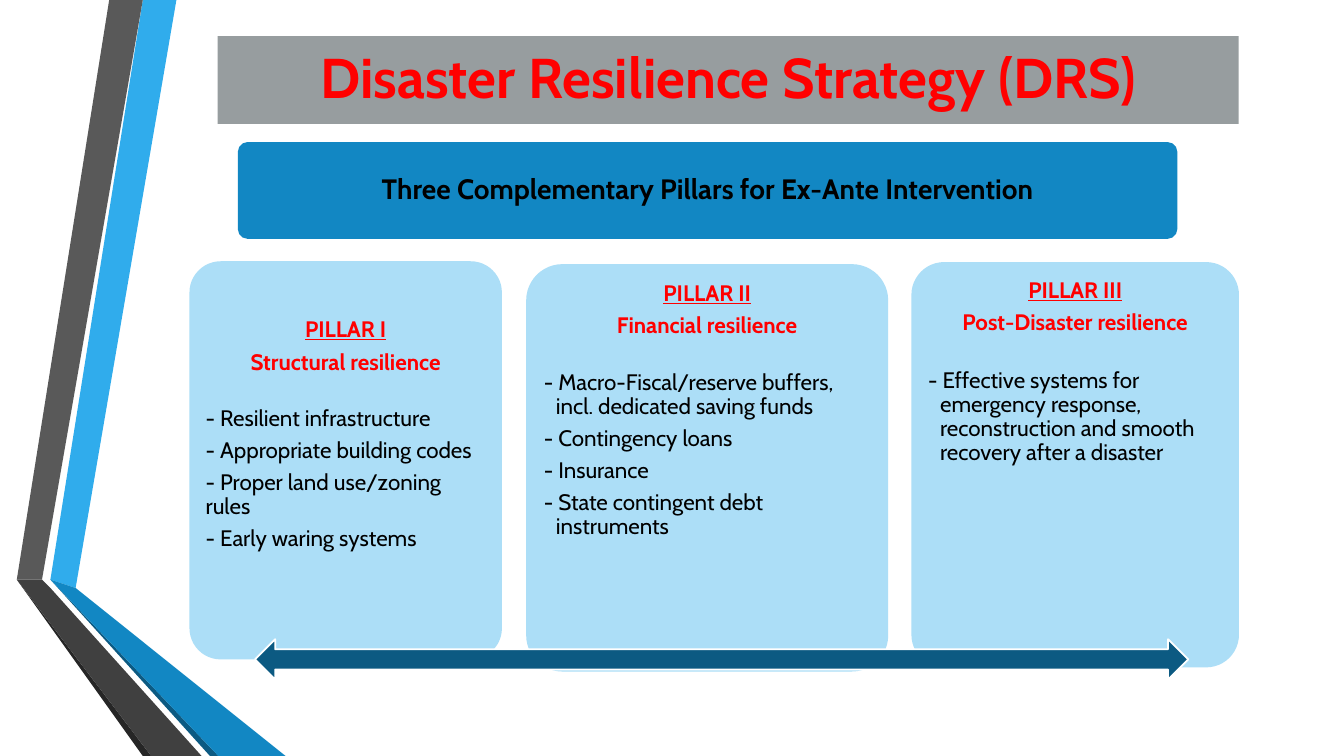
from pptx import Presentation
from pptx.dml.color import RGBColor
from pptx.enum.shapes import MSO_SHAPE
from pptx.enum.text import MSO_ANCHOR, PP_ALIGN
from pptx.util import Inches, Pt

CELL = Inches(1 / 12)
FONT = "Cabin"
RED, BLACK, WHITE = "FF0000", "000000", "FFFFFF"
BLUE, PALE, DEEP, GREY = "1287C3", "ACDEF7", "0C5A82", "979D9F"

RIBBONS = [
    ("30ACEC", [(6, 69.36), (9.24, 69.96), (20.76, 0), (17.4, 0)]),
    ("595959", [(16.68, 0), (13.32, 0), (1.92, 68.76), (5.28, 69.24)]),
    ("262626", [(1.92, 68.76), (17.4, 90), (18.12, 90)]),
    (DEEP, [(6, 69.48), (24.96, 90), (25.68, 90)]),
    (BLUE, [(6, 69.4), (25.68, 90), (33.96, 90), (9.24, 69.96)]),
    ("404040", [(24.24, 90), (5.76, 69.96), (5.28, 69.24), (1.92, 68.76), (18.12, 90)]),
]

PILLARS = [
    ((22.56, 31.1, 37.2, 47.4), 5.7, 0, 23, "PILLAR I", "Structural resilience", [
        "- Resilient infrastructure",
        "- Appropriate building codes",
        "- Proper land use/zoning rules",
        "- Early waring systems",
    ]),
    ((62.64, 31.45, 43.1, 48.5), 0.84, 1.44, 23, "PILLAR II", "Financial resilience", [
        "- Macro-Fiscal/reserve buffers, incl. dedicated saving funds",
        "- Contingency loans",
        "- Insurance",
        "- State contingent debt instruments",
    ]),
    ((108.5, 31.2, 39, 48.25), 0.84, 1.44, 24, "PILLAR III", "Post-Disaster resilience", [
        "- Effective systems for emergency response, reconstruction and smooth "
        "recovery after a disaster",
    ]),
]


def grid(n):
    return round(n * CELL)


def paint(item, color):
    item.fill.solid()
    item.fill.fore_color.rgb = RGBColor.from_string(color)
    item.line.fill.background()
    item.shadow.inherit = False


def block(slide, kind, box, color):
    item = slide.shapes.add_shape(kind, *map(grid, box))
    paint(item, color)
    return item


def panel(slide, box, color):
    item = block(slide, MSO_SHAPE.ROUNDED_RECTANGLE, box, color)
    item.adjustments[0] = 0.1
    return item


def setup(item, anchor, pad, top):
    frame = item.text_frame
    frame.word_wrap = True
    frame.vertical_anchor = anchor
    frame.margin_left = frame.margin_right = frame.margin_bottom = grid(pad)
    frame.margin_top = grid(top)
    return frame


def write(para, text, size, color, bold=True, line=False, center=True, after=0):
    para.alignment = PP_ALIGN.CENTER if center else PP_ALIGN.LEFT
    para.line_spacing = 0.9
    para.space_after = Pt(after)
    run = para.add_run()
    run.text = text
    font = run.font
    font.name, font.size = FONT, Pt(size)
    font.bold, font.underline = bold, line
    font.color.rgb = RGBColor.from_string(color)


def ribbon(slide, box):
    left, top = box
    for color, points in RIBBONS:
        spots = [(left + x, top + y) for x, y in points]
        form = slide.shapes.build_freeform(*spots[0], scale=CELL)
        form.add_line_segments(spots[1:], close=True)
        paint(form.convert_to_shape(), color)


def title(slide, box):
    item = block(slide, MSO_SHAPE.RECTANGLE, box, GREY)
    frame = setup(item, MSO_ANCHOR.MIDDLE, 1.2, 0.6)
    frame.margin_bottom = grid(0.6)
    write(frame.paragraphs[0], "Disaster Resilience Strategy (DRS)", 40, RED)


def banner(slide, box):
    frame = setup(panel(slide, box, BLUE), MSO_ANCHOR.MIDDLE, 0.96, 0.96)
    text = "Three Complementary Pillars for Ex-Ante Intervention"
    write(frame.paragraphs[0], text, 20, BLACK)


def pillar(slide, box, top, hang, gap, name, theme, points):
    frame = setup(panel(slide, box, PALE), MSO_ANCHOR.TOP, 0.84, top)
    write(frame.paragraphs[0], name, 16, RED, line=True, after=6)
    write(frame.add_paragraph(), theme, 16, RED, after=gap)
    for point in points:
        para = frame.add_paragraph()
        write(para, point, 16, BLACK, bold=False, center=False, after=5.6)
        props = para._p.get_or_add_pPr()
        props.set("marL", str(grid(hang)))
        props.set("indent", str(-grid(hang)))


def arrow(slide, box):
    item = block(slide, MSO_SHAPE.LEFT_RIGHT_ARROW, box, DEEP)
    item.line.color.rgb = RGBColor.from_string(WHITE)
    item.line.width = Pt(1.25)


def main():
    deck = Presentation()
    deck.slide_width, deck.slide_height = grid(160), grid(90)
    slide = deck.slides.add_slide(deck.slide_layouts[6])
    ribbon(slide, (0, 0))
    title(slide, (25.92, 4.32, 121.56, 10.44))
    banner(slide, (28.32, 16.92, 111.84, 11.52))
    for parts in PILLARS:
        pillar(slide, *parts)
    arrow(slide, (30.36, 76.1, 111.1, 4.8))
    deck.save("out.pptx")


if __name__ == "__main__":
    main()
